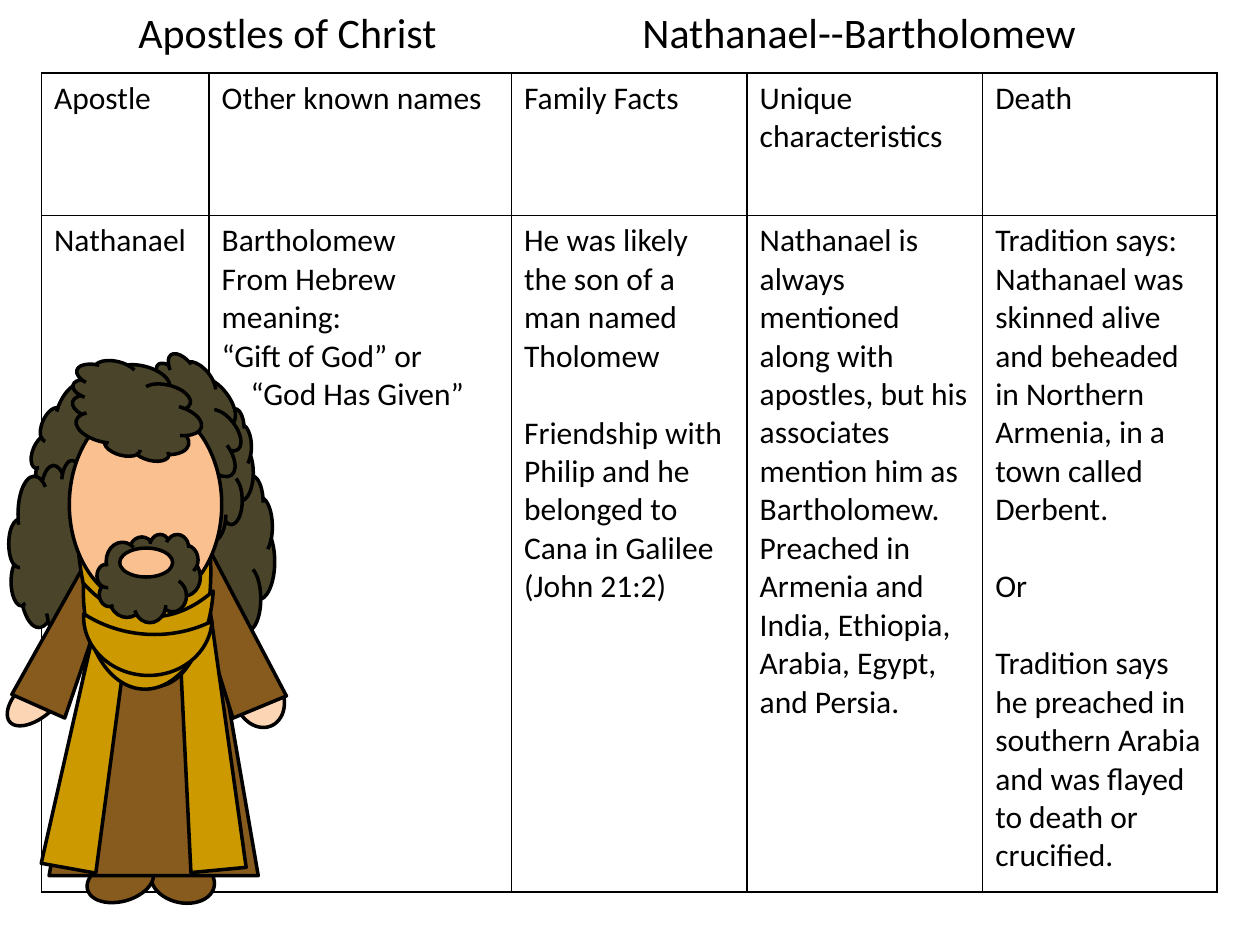
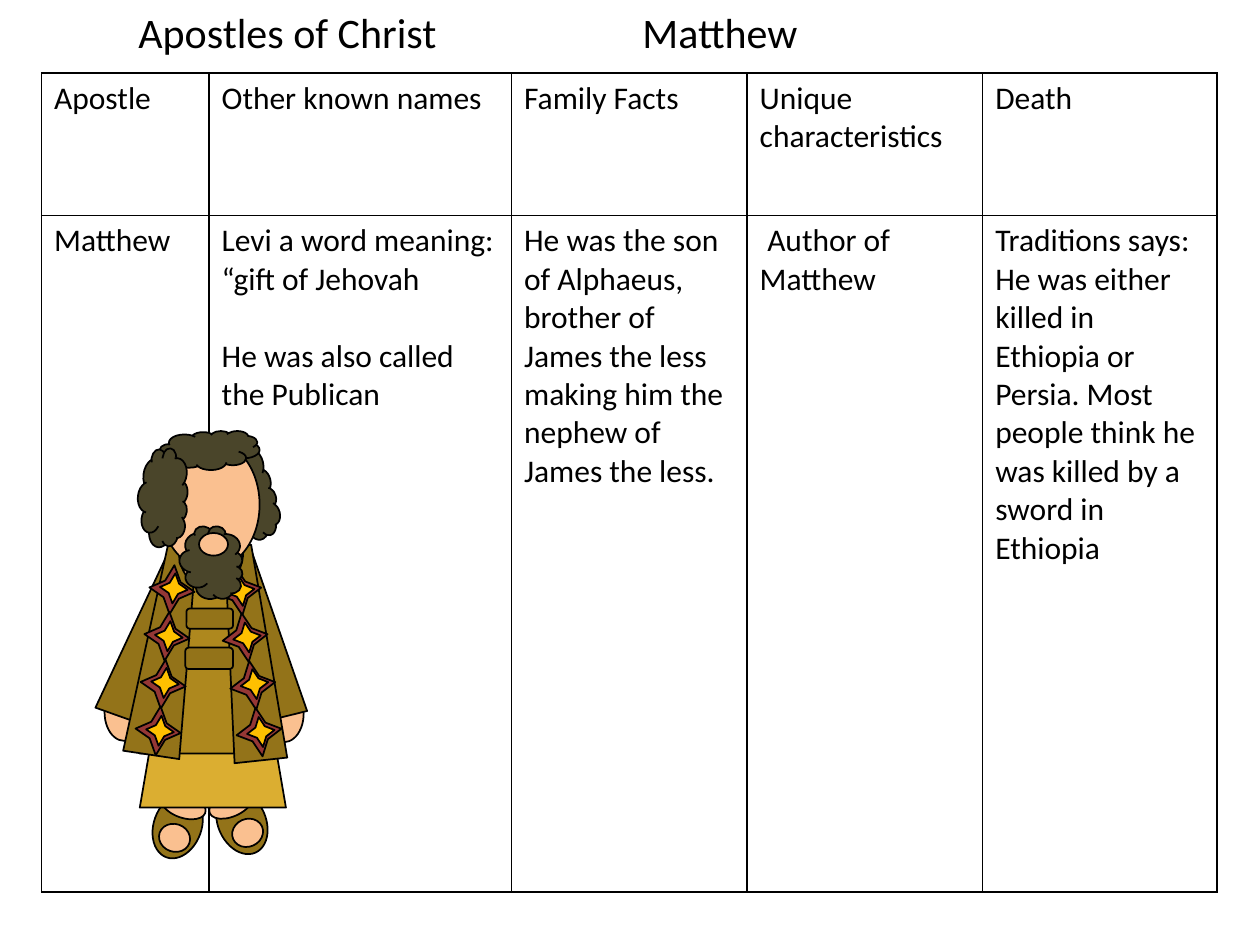
from lxml.etree import SubElement
from pptx import Presentation
from pptx.dml.color import RGBColor
from pptx.enum.shapes import MSO_SHAPE as Shape
from pptx.enum.text import MSO_AUTO_SIZE as AutoSize
from pptx.oxml import parse_xml
from pptx.oxml.ns import nsdecls, qn
from pptx.util import Pt

PX = 9144
COLORS = {
    "ink": "000000", "hair": "4A452A", "skin": "FAC090", "hand": "FCD5B5",
    "robe": "875A1D", "shawl": "CC9900", "coat": "937319", "skirt": "DBAE31",
    "tunic": "AE881E", "star_rim": "953735", "star": "FFC000",
}
FONT = "Calibri"
COLUMN_WIDTHS = [133, 240, 187, 187, 186]
ROW_HEIGHTS = [113, 537]
HEADINGS = ["Apostle", "Other known names", "Family Facts", "Unique characteristics", "Death"]


def write(frame, text, size=18, gaps=(), indents={}, tab=None):
    frame.word_wrap = True
    for i, line in enumerate(text.split("\n")):
        paragraph = frame.paragraphs[0] if i == 0 else frame.add_paragraph()
        if i in gaps:
            paragraph.space_before = Pt(22)
        props = paragraph._p.get_or_add_pPr()
        if i in indents:
            props.set("indent", str(indents[i] * PX))
        if tab:
            stops = SubElement(props, qn("a:tabLst"))
            SubElement(stops, qn("a:tab"), pos=str(tab * PX), algn="l")
        run = paragraph.add_run()
        run.text = line
        run.font.size = Pt(size)
        run.font.name = FONT
        run.font.color.rgb = RGBColor.from_string(COLORS["ink"])


def draw(figure, kind, color, box, turn=0, adjust=None, line=1):
    part = figure.shapes.add_shape(kind, *[round(v) * PX for v in box])
    part.shadow.inherit = False
    part.rotation = turn
    if adjust is not None:
        part.adjustments[0] = adjust
    part.fill.solid()
    part.fill.fore_color.rgb = RGBColor.from_string(COLORS[color])
    part.line.color.rgb = RGBColor.from_string(COLORS["ink"])
    part.line.width = Pt(line)


APOSTLES = [
    ("Nathanael--Bartholomew", 808, [
        ("Nathanael", {}),
        ("Bartholomew\nFrom Hebrew meaning:\n“Gift of God” or\n“God Has Given”",
         {"indents": {3: 23}}),
        ("He was likely the son of a man named Tholomew\n"
         "Friendship with Philip and he belonged to Cana in Galilee (John 21:2)",
         {"gaps": [1]}),
        ("Nathanael is always mentioned along with apostles, but his associates "
         "mention him as Bartholomew.\n"
         "Preached in Armenia and India, Ethiopia, Arabia, Egypt, and Persia.", {}),
        ("Tradition says: Nathanael was skinned alive and beheaded in Northern "
         "Armenia, in a town called Derbent.\nOr\n"
         "Tradition says he preached in southern Arabia and was flayed to death "
         "or crucified.", {"gaps": [1, 2]}),
    ]),
    ("Matthew", 725, [
        ("Matthew", {}),
        ("Levi a word meaning:\n“gift of Jehovah\nHe was also called the Publican",
         {"gaps": [2]}),
        ("He was the son of Alphaeus, brother of James the less making him the "
         "nephew of James the less.", {}),
        ("Author of Matthew", {"indents": {0: 6}}),
        ("Traditions says: He was either killed in Ethiopia or Persia. Most people "
         "think he was killed by a sword in Ethiopia", {}),
    ]),
]

NATHANAEL = [
    (Shape.CLOUD, "hair", (136, 377, 82, 141)),
    (Shape.CLOUD, "hair", (136, 324, 65, 105)),
    (Shape.CLOUD, "hair", (114, 283, 74, 105), 322.6),
    (Shape.CLOUD, "hair", (30, 299, 74, 105), 23.3),
    (Shape.CLOUD, "hair", (7, 365, 82, 141)),
    (Shape.OVAL, "robe", (127, 673, 36, 51), 102.1),
    (Shape.OVAL, "robe", (79, 672, 33, 54), 74.5),
    (Shape.TRAPEZOID, "robe", (39, 455, 166, 240)),
    (Shape.TRAPEZOID, "shawl", (54, 447, 44, 244), 10.2),
    (Shape.OVAL, "hand", (15, 524, 30, 59), 48.4),
    (Shape.OVAL, "hand", (187, 531, 38, 47), 337.1),
    (Shape.TRAPEZOID, "robe", (33, 440, 46, 126), 24),
    (Shape.TRAPEZOID, "robe", (159, 440, 46, 126), 337.5),
    (Shape.TRAPEZOID, "shawl", (140, 447, 44, 244), 354.6),
    (Shape.MOON, "shawl", (65, 438, 110, 104), 264.1, 0.71),
    (Shape.MOON, "shawl", (75, 455, 81, 103), 273.3, 0.71),
    (Shape.MOON, "shawl", (93, 462, 46, 102), 273.3, 0.71),
    (Shape.OVAL, "skin", (55, 320, 121, 161)),
    (Shape.CLOUD, "hair", (71, 273, 73, 107), 284.3),
    (Shape.CLOUD, "hair", (77, 424, 82, 70)),
    (Shape.OVAL, "skin", (95, 435, 42, 23)),
]

MATTHEW_BODY = [
    (Shape.CLOUD, "hair", (158, 370, 79, 40), 76.4),
    (Shape.OVAL, "coat", (122, 629, 38, 53), 19.6),
    (Shape.OVAL, "skin", (126, 654, 25, 22), 19.6),
    (Shape.OVAL, "skin", (127, 629, 37, 20), 19.6),
    (Shape.OVAL, "coat", (173, 626, 38, 53), 336.1),
    (Shape.OVAL, "skin", (184, 650, 25, 22), 336.1),
    (Shape.OVAL, "skin", (165, 628, 37, 20), 336.1),
    (Shape.OVAL, "skin", (210, 544, 31, 45)),
    (Shape.OVAL, "skin", (83, 543, 31, 45)),
    (Shape.TRAPEZOID, "coat", (172, 426, 55, 147), 346.2),
    (Shape.TRAPEZOID, "coat", (98, 433, 55, 142), 19.6),
    (Shape.TRAPEZOID, "skirt", (111, 431, 116, 210), 0, 0.31),
    (Shape.TRAPEZOID, "tunic", (111, 420, 116, 178), 0, 0.32),
    (Shape.TRAPEZOID, "coat", (177, 433, 42, 171), 353.9),
    (Shape.TRAPEZOID, "coat", (110, 431, 45, 169), 8.5),
    (Shape.OVAL, "skin", (142, 408, 51, 60)),
    (Shape.OVAL, "skin", (127, 349, 79, 103)),
]

coat_stars = []
for left, top, step, turn in [(170, 451, 5.4, 81.7), (117, 450, -3.7, 95.7)]:
    for i in range(4):
        x, y = left + step * i, top + 37.4 * i
        coat_stars += [
            (Shape.STAR_4_POINT, "star_rim", (x, y, 39, 36), turn, 0.24),
            (Shape.STAR_4_POINT, "star", (x + 9, y + 6.5, 24, 22), turn, 0.24),
        ]

MATTHEW_FRONT = [
    (Shape.ROUNDED_RECTANGLE, "coat", (148, 483, 37, 16)),
    (Shape.ROUNDED_RECTANGLE, "coat", (147, 514, 38, 17)),
    (Shape.CLOUD, "hair", (127, 342, 79, 31)),
    (Shape.CLOUD, "hair", (90, 375, 79, 40), 96.7),
    (Shape.CLOUD, "hair", (139, 421, 58, 51), 96.7),
    (Shape.OVAL, "skin", (158, 423, 23, 18)),
]

FIGURES = [(NATHANAEL, 2), (MATTHEW_BODY + coat_stars + MATTHEW_FRONT, 1)]

deck = Presentation()
deck.slide_width, deck.slide_height = 1000 * PX, 750 * PX

for (apostle, title_width, facts), (figure_parts, outline) in zip(APOSTLES, FIGURES):
    slide = deck.slides.add_slide(deck.slide_layouts[6])

    facts_table = slide.shapes.add_table(
        2, 5, 33 * PX, 58 * PX, sum(COLUMN_WIDTHS) * PX, sum(ROW_HEIGHTS) * PX).table
    facts_table.first_row = facts_table.horz_banding = False
    for column, width in zip(facts_table.columns, COLUMN_WIDTHS):
        column.width = width * PX
    for row, height in zip(facts_table.rows, ROW_HEIGHTS):
        row.height = height * PX
    for r, entries in enumerate([[(heading, {}) for heading in HEADINGS], facts]):
        for c, (text, layout) in enumerate(entries):
            cell = facts_table.cell(r, c)
            write(cell.text_frame, text, **layout)
            for side in ("lnL", "lnR", "lnT", "lnB"):
                cell._tc.get_or_add_tcPr().append(parse_xml(
                    f'<a:{side} {nsdecls("a")} w="{Pt(1)}"><a:solidFill>'
                    f'<a:srgbClr val="{COLORS["ink"]}"/></a:solidFill></a:{side}>'))
            cell.fill.background()

    title = slide.shapes.add_textbox(100 * PX, 0, title_width * PX, 50 * PX).text_frame
    title.auto_size = AutoSize.SHAPE_TO_FIT_TEXT
    write(title, f"Apostles of Christ\t{apostle}", size=24, tab=400)

    figure = slide.shapes.add_group_shape()
    for figure_part in figure_parts:
        draw(figure, *figure_part, line=outline)

deck.save("out.pptx")
